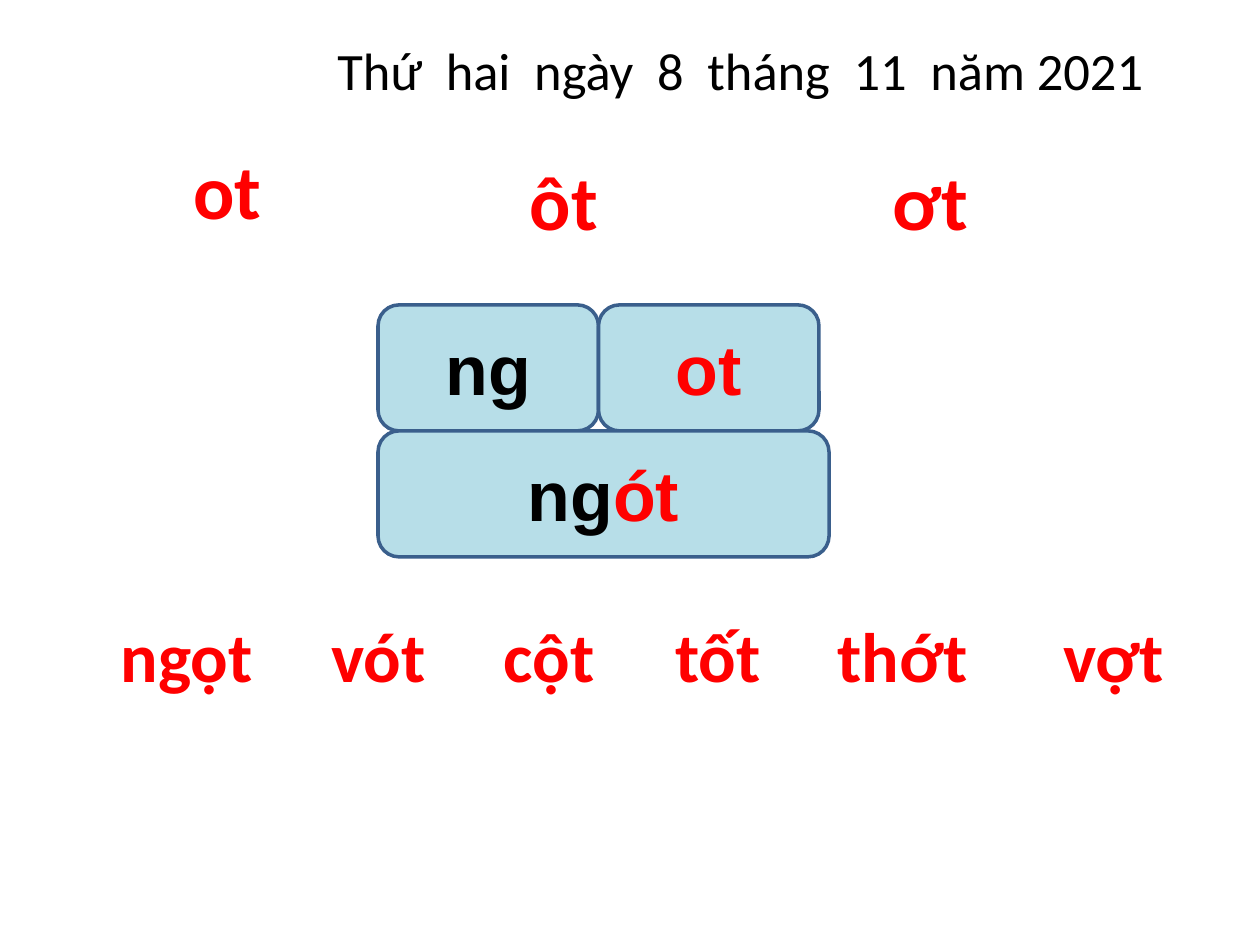
from lxml import etree
from pptx import Presentation
from pptx.dml.color import RGBColor
from pptx.enum.shapes import MSO_SHAPE
from pptx.enum.text import MSO_ANCHOR, PP_ALIGN
from pptx.oxml.ns import qn
from pptx.util import Inches, Pt

RED = RGBColor(0xFF, 0x00, 0x00)
BLACK = RGBColor(0x00, 0x00, 0x00)
LIGHT_BLUE = RGBColor(0xB7, 0xDE, 0xE8)
DARK_BLUE = RGBColor(0x3A, 0x5F, 0x8C)
ROUNDED = MSO_SHAPE.ROUNDED_RECTANGLE
LEFT, CENTER = PP_ALIGN.LEFT, PP_ALIGN.CENTER
MIDDLE = MSO_ANCHOR.MIDDLE


def add_run(paragraph, text, font, size, color, bold=True):
    run = paragraph.add_run()
    run.text = text
    run.font.name = font
    run.font.size = Pt(size)
    run.font.bold = bold
    run.font.color.rgb = color


def add_text_box(slide, left, top, width, height, alignment):
    text_box = slide.shapes.add_textbox(
        Inches(left), Inches(top), Inches(width), Inches(height))
    text_box.text_frame.word_wrap = True
    paragraph = text_box.text_frame.paragraphs[0]
    paragraph.alignment = alignment
    return paragraph


presentation = Presentation()
presentation.slide_width = Inches(10)
presentation.slide_height = Inches(7.5)
slide = presentation.slides.add_slide(presentation.slide_layouts[6])

# Date line
paragraph = add_text_box(slide, 2.58, 0.25, 6.83, 0.61, LEFT)
add_run(paragraph, "Thứ  hai  ngày  8  tháng  11  năm 2021", "Calibri", 30, BLACK, bold=False)

# The three rhymes
for rhyme, left, top in [("ot ", 0.75, 1.08), ("ôt ", 3.42, 1.17), ("ơt ", 6.33, 1.17)]:
    paragraph = add_text_box(slide, left, top, 2.25, 0.84, CENTER)
    add_run(paragraph, rhyme, "Calibri", 44, RED)

# Syllable diagram: initial and rhyme above the whole syllable
blocks = [
    (3, 2.42, 1.75, [("ng", BLACK)]),
    (4.75, 2.42, 1.75, [("ot", RED)]),
    (3, 3.42, 3.58, [("ng", BLACK), ("ót", RED)]),
]
for left, top, width, parts in blocks:
    block = slide.shapes.add_shape(
        ROUNDED, Inches(left), Inches(top), Inches(width), Inches(1))
    block.shadow.inherit = False
    block.fill.solid()
    block.fill.fore_color.rgb = LIGHT_BLUE
    block.line.color.rgb = DARK_BLUE
    block.line.width = Pt(2)
    block.text_frame.vertical_anchor = MIDDLE
    paragraph = block.text_frame.paragraphs[0]
    paragraph.alignment = CENTER
    for text, color in parts:
        add_run(paragraph, text, "Arial", 40, color)

# Practice words, spaced with tab stops
paragraph = add_text_box(slide, 0.86, 4.81, 8.97, 0.77, LEFT)
tab_list = etree.SubElement(paragraph._p.get_or_add_pPr(), qn("a:tabLst"))
for position in [1.67, 3.04, 4.4, 5.69, 7.48]:
    etree.SubElement(tab_list, qn("a:tab"), pos=str(Inches(position)), algn="l")
words = ["ngọt", "vót", "cột", "tốt", "thớt", "vợt"]
add_run(paragraph, "\t".join(words), "Calibri", 40, RED)

presentation.save("out.pptx")
